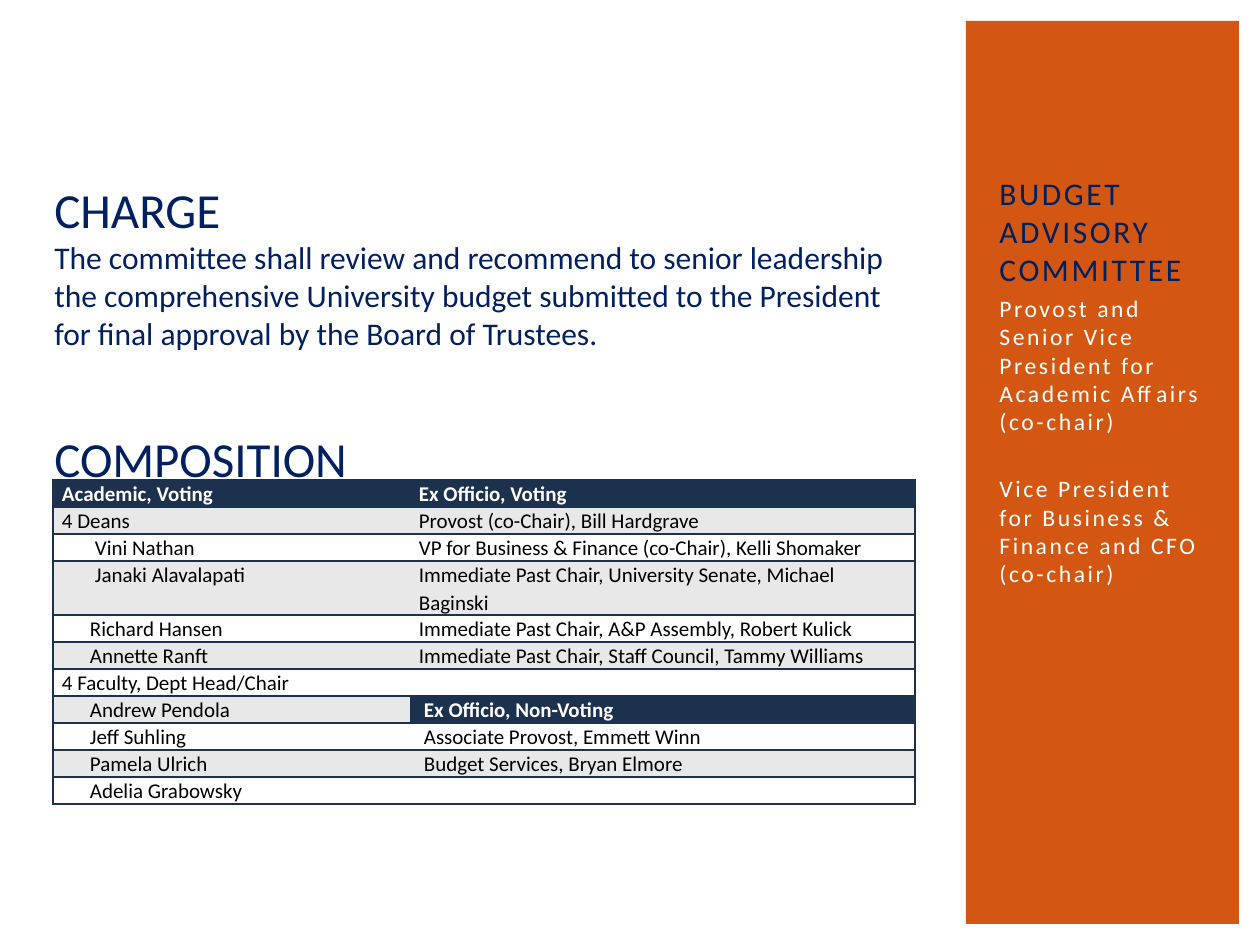
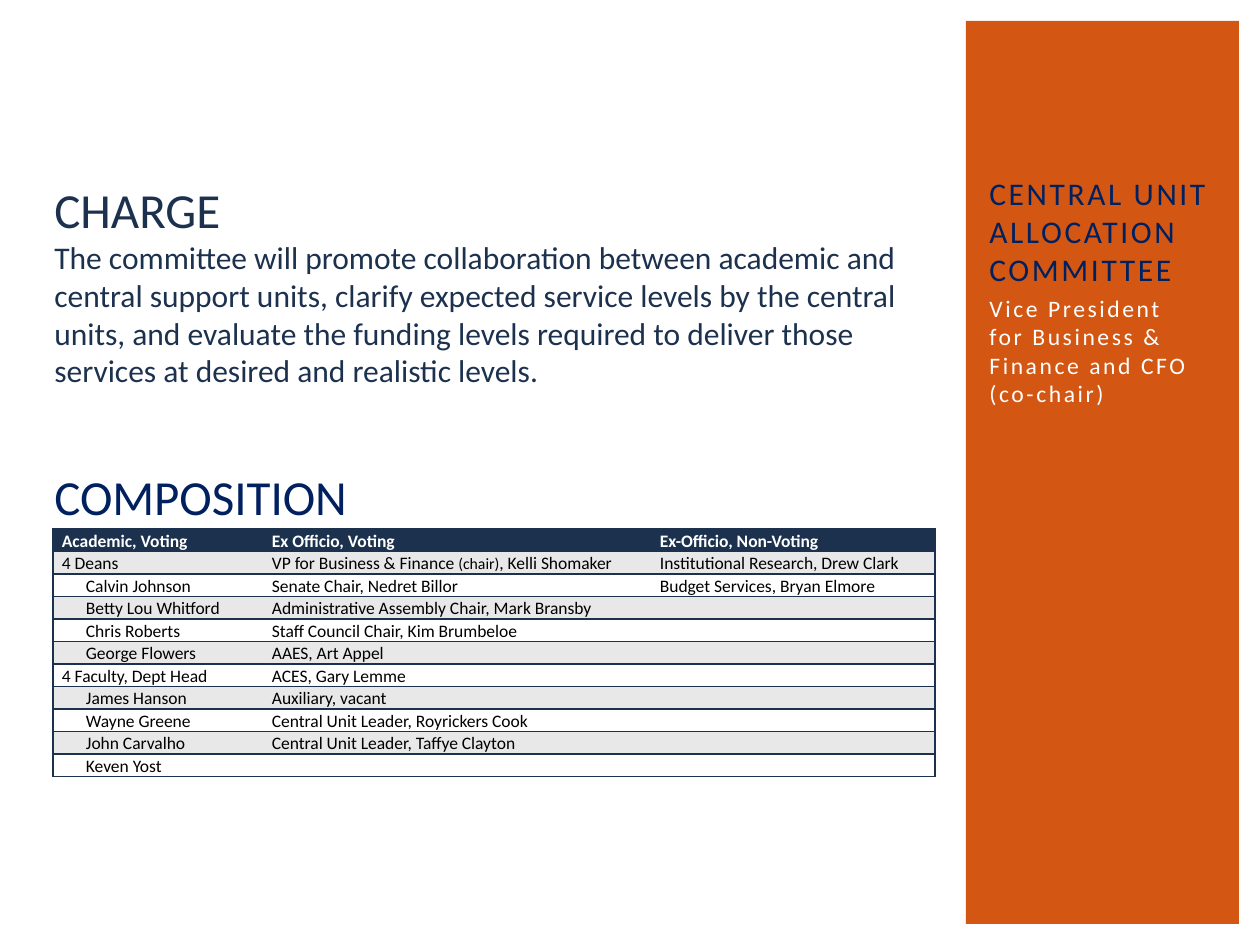
import dataclasses
import itertools
import typing

import pptx
import pptx.dml.color
import pptx.enum.shapes
import pptx.enum.text
import pptx.oxml.ns
import pptx.util
from lxml import etree

PX_PER_INCH = 126


def px(length: int) -> pptx.util.Emu:
    return pptx.util.Emu(round(length * 914400 / PX_PER_INCH))


# Theme: colours and type sizes
@dataclasses.dataclass(frozen=True)
class Theme:
    font: str = "Calibri"
    orange: str = "D35712"
    navy: str = "002060"
    slate: str = "1C314E"
    band: str = "E8E8E9"
    white: str = "FFFFFF"
    black: str = "000000"
    heading_size: float = 28
    text_size: float = 18
    chair_size: float = 13.5
    small_size: float = 9
    letter_spacing: float = 1.5
    section_gap: float = 44
    chair_gap: float = 22
    table_line_spacing: float = 1.07


THEME = Theme()


class Box(typing.NamedTuple):
    left: int
    top: int
    width: int
    height: int


class Entry(typing.NamedTuple):
    text: str = ""
    indent: int = 0
    header: bool = False
    small: str = ""  # part of the text set in the small size


@dataclasses.dataclass(frozen=True)
class Roster:
    top: int
    row_height: int
    size: float
    widths: list[int]
    columns: list[list[Entry]]


@dataclasses.dataclass(frozen=True)
class Committee:
    name: str
    chairs: list[str]
    sidebar_left: int
    name_width: int
    charge: str
    charge_color: str
    roster: Roster


def header(text: str, indent: int = 0) -> Entry:
    return Entry(text, indent, header=True)


def entries(*texts: str, indent: int = 0) -> list[Entry]:
    return [Entry(text, indent) for text in texts]


# Content
BUDGET = Committee(
    name="BUDGET ADVISORY COMMITTEE",
    chairs=["Provost and Senior Vice President for Academic Affairs (co-chair)",
            "Vice President for Business & Finance and CFO (co-chair)"],
    sidebar_left=987,
    name_width=231,
    charge="The committee shall review and recommend to senior leadership the comprehensive "
           "University budget submitted to the President for final approval by the Board of Trustees.",
    charge_color=THEME.navy,
    roster=Roster(
        top=480, row_height=24, size=12, widths=[357, 505],
        columns=[
            [header("Academic, Voting"), Entry("4 Deans"),
             *entries("Vini Nathan", "Janaki Alavalapati", indent=33),
             *entries("Richard Hansen", "Annette Ranft", indent=28),
             Entry("4 Faculty, Dept Head/Chair"),
             *entries("Andrew Pendola", "Jeff Suhling", "Pamela Ulrich", "Adelia Grabowsky", indent=28)],
            [header("Ex Officio, Voting"),
             *entries("Provost (co-Chair), Bill Hardgrave",
                      "VP for Business & Finance (co-Chair), Kelli Shomaker",
                      "Immediate Past Chair, University Senate, Michael Baginski",
                      "Immediate Past Chair, A&P Assembly, Robert Kulick",
                      "Immediate Past Chair, Staff Council, Tammy Williams", ""),
             header("Ex Officio, Non-Voting", indent=5),
             *entries("Associate Provost, Emmett Winn", "Budget Services, Bryan Elmore", indent=5)],
        ]),
)

CENTRAL_UNIT = Committee(
    name="CENTRAL UNIT ALLOCATION COMMITTEE",
    chairs=["Vice President for Business & Finance and CFO (co-chair)"],
    sidebar_left=977,
    name_width=252,
    charge="The committee will promote collaboration between academic and central support units, "
           "clarify expected service levels by the central units, and evaluate the funding levels "
           "required to deliver those services at desired and realistic levels.",
    charge_color=THEME.slate,
    roster=Roster(
        top=529, row_height=22, size=10, widths=[210, 388, 284],
        columns=[
            [header("Academic, Voting"), Entry("4 Deans"),
             *entries("Calvin Johnson", "Betty Lou Whitford", "Chris Roberts", "George Flowers", indent=24),
             Entry("4 Faculty, Dept Head"),
             *entries("James Hanson", "Wayne Greene", "John Carvalho", "Keven Yost", indent=24)],
            [header("Ex Officio, Voting"),
             Entry("VP for Business & Finance (chair), Kelli Shomaker", small="(chair)"),
             *entries("Senate Chair, Nedret Billor", "Administrative Assembly Chair, Mark Bransby",
                      "Staff Council Chair, Kim Brumbeloe", "AAES, Art Appel", "ACES, Gary Lemme",
                      "Auxiliary, vacant", "Central Unit Leader, Royrickers Cook",
                      "Central Unit Leader, Taffye Clayton")],
            [header("Ex-Officio, Non-Voting"),
             *entries("Institutional Research, Drew Clark", "Budget Services, Bryan Elmore")],
        ]),
)


# Text helpers
def rgb(color: str) -> pptx.dml.color.RGBColor:
    return pptx.dml.color.RGBColor.from_string(color)


def write(paragraph, text: str, *, size: float, color: str, bold: bool = False,
          spacing: float = 0, before: float = 0) -> None:
    run = paragraph.add_run()
    run.text = text
    run.font.name = THEME.font
    run.font.size = pptx.util.Pt(size)
    run.font.bold = bold
    run.font.color.rgb = rgb(color)
    if spacing:
        run._r.get_or_add_rPr().set("spc", str(round(spacing * 100)))
    if before:
        paragraph.space_before = pptx.util.Pt(before)


def add_text_frame(slide, box: Box):
    frame = slide.shapes.add_textbox(*map(px, box)).text_frame
    frame.word_wrap = True
    return frame


# Sidebar with the committee name and its chairs
def add_sidebar(slide, committee: Committee) -> None:
    panel = slide.shapes.add_shape(pptx.enum.shapes.MSO_SHAPE.RECTANGLE, *map(px, Box(966, 21, 273, 903)))
    panel.shadow.inherit = False
    panel.fill.solid()
    panel.fill.fore_color.rgb = rgb(THEME.orange)
    panel.line.fill.background()

    name = add_text_frame(slide, Box(committee.sidebar_left, 63, committee.name_width, 231))
    name.vertical_anchor = pptx.enum.text.MSO_ANCHOR.BOTTOM
    write(name.paragraphs[0], committee.name, size=THEME.text_size, color=THEME.navy,
          spacing=THEME.letter_spacing)

    chairs = add_text_frame(slide, Box(committee.sidebar_left, 294, 231, 410))
    chairs.margin_top = 0
    for index, chair in enumerate(committee.chairs):
        paragraph = chairs.add_paragraph() if index else chairs.paragraphs[0]
        write(paragraph, chair, size=THEME.chair_size, color=THEME.white,
              spacing=THEME.letter_spacing, before=THEME.chair_gap if index else 0)


# Charge and the heading of the roster
def add_charge(slide, committee: Committee) -> None:
    frame = add_text_frame(slide, Box(42, 173, 872, 320))
    write(frame.paragraphs[0], "CHARGE", size=THEME.heading_size, color=committee.charge_color)
    write(frame.add_paragraph(), committee.charge, size=THEME.text_size, color=committee.charge_color)
    write(frame.add_paragraph(), "COMPOSITION", size=THEME.heading_size, color=THEME.navy,
          before=THEME.section_gap)


# Roster table
def set_borders(cell, visible: dict[str, bool]) -> None:
    properties = cell._tc.get_or_add_tcPr()
    for position, (tag, shown) in enumerate(visible.items()):
        line = etree.Element(pptx.oxml.ns.qn(f"a:{tag}"), w=str(pptx.util.Pt(1)))
        if shown:
            fill = etree.SubElement(line, pptx.oxml.ns.qn("a:solidFill"))
            etree.SubElement(fill, pptx.oxml.ns.qn("a:srgbClr"), val=THEME.slate)
        else:
            etree.SubElement(line, pptx.oxml.ns.qn("a:noFill"))
        properties.insert(position, line)


def fill_cell(cell, entry: Entry, size: float, fill: str) -> None:
    cell.margin_left, cell.margin_right = px(9 + entry.indent), px(9)
    cell.margin_top = cell.margin_bottom = 0
    cell.fill.solid()
    cell.fill.fore_color.rgb = rgb(THEME.slate if entry.header else fill)
    paragraph = cell.text_frame.paragraphs[0]
    paragraph.line_spacing = THEME.table_line_spacing
    parts = entry.text.partition(entry.small) if entry.small else (entry.text,)
    for part in filter(None, parts):
        write(paragraph, part, size=THEME.small_size if part == entry.small else size,
              color=THEME.white if entry.header else THEME.black, bold=entry.header)
    if not entry.text:  # keeps an empty row as low as the others
        etree.SubElement(paragraph._p, pptx.oxml.ns.qn("a:endParaRPr"), sz=str(round(size * 100)))


def add_roster(slide, roster: Roster) -> None:
    rows = list(itertools.zip_longest(*roster.columns, fillvalue=Entry()))
    box = Box(53, roster.top, sum(roster.widths), roster.row_height * len(rows))
    table = slide.shapes.add_table(len(rows), len(roster.widths), *map(px, box)).table
    table.first_row = table.horz_banding = False
    for column, width in zip(table.columns, roster.widths):
        column.width = px(width)
    last = len(roster.widths) - 1
    for row_index, row in enumerate(rows):
        table.rows[row_index].height = px(roster.row_height)
        fill = THEME.band if row_index % 2 else THEME.white
        for column_index, entry in enumerate(row):
            cell = table.cell(row_index, column_index)
            fill_cell(cell, entry, roster.size, fill)
            set_borders(cell, {"lnL": column_index == 0, "lnR": column_index == last,
                               "lnT": True, "lnB": True})


def add_committee_slide(presentation, committee: Committee) -> None:
    slide = presentation.slides.add_slide(presentation.slide_layouts[6])
    slide.background.fill.solid()
    slide.background.fill.fore_color.rgb = rgb(THEME.white)
    add_sidebar(slide, committee)
    add_charge(slide, committee)
    add_roster(slide, committee.roster)


def main() -> None:
    presentation = pptx.Presentation()
    presentation.slide_width, presentation.slide_height = px(1260), px(945)
    for committee in (BUDGET, CENTRAL_UNIT):
        add_committee_slide(presentation, committee)
    presentation.save("out.pptx")


if __name__ == "__main__":
    main()
